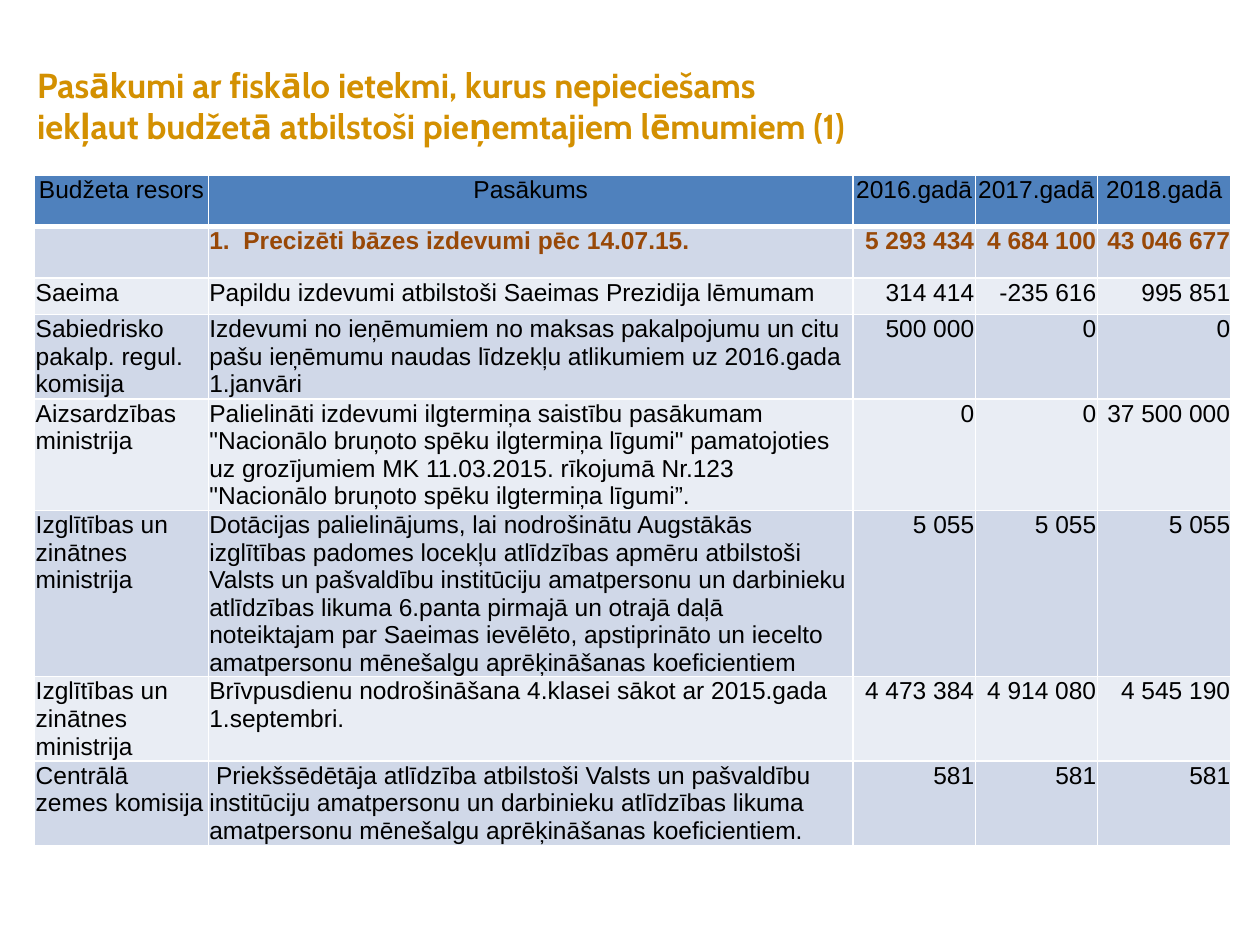
from lxml.etree import SubElement
from pptx import Presentation
from pptx.dml.color import RGBColor
from pptx.enum.text import MSO_ANCHOR, PP_ALIGN
from pptx.oxml.ns import qn
from pptx.util import Cm, Pt

TITLE = ("Pasākumi ar fiskālo ietekmi, kurus nepieciešams "
         "iekļaut budžetā atbilstoši pieņemtajiem lēmumiem (1)")
COL_WIDTHS = [3.5, 13, 2.46, 2.46, 2.7]
ROW_HEIGHTS = [1.03, 1.03, 0.74, 1.7, 2.25, 3.35, 1.7, 1.7]
ROWS = [
    ("Budžeta resors", "Pasākums", "2016.gadā", "2017.gadā", "2018.gadā"),
    ("", "1.  Precizēti bāzes izdevumi pēc 14.07.15.",
     "5 293 434", "4 684 100", "43 046 677"),
    ("Saeima", "Papildu izdevumi atbilstoši Saeimas Prezidija lēmumam",
     "314 414", "-235 616", "995 851"),
    ("Sabiedrisko pakalp. regul. komisija",
     "Izdevumi no ieņēmumiem no maksas pakalpojumu un citu pašu ieņēmumu "
     "naudas līdzekļu atlikumiem uz 2016.gada 1.janvāri",
     "500 000", "0", "0"),
    ("Aizsardzības ministrija",
     'Palielināti izdevumi ilgtermiņa saistību pasākumam "Nacionālo bruņoto '
     'spēku ilgtermiņa līgumi" pamatojoties uz grozījumiem MK 11.03.2015. '
     'rīkojumā Nr.123 "Nacionālo bruņoto spēku ilgtermiņa līgumi”.',
     "0", "0", "37 500 000"),
    ("Izglītības un zinātnes ministrija",
     "Dotācijas palielinājums, lai nodrošinātu Augstākās izglītības padomes "
     "locekļu atlīdzības apmēru atbilstoši Valsts un pašvaldību institūciju "
     "amatpersonu un darbinieku atlīdzības likuma 6.panta pirmajā un otrajā "
     "daļā noteiktajam par Saeimas ievēlēto, apstiprināto un iecelto "
     "amatpersonu mēnešalgu aprēķināšanas koeficientiem",
     "5 055", "5 055", "5 055"),
    ("Izglītības un zinātnes ministrija",
     "Brīvpusdienu nodrošināšana 4.klasei sākot ar 2015.gada 1.septembri.",
     "4 473 384", "4 914 080", "4 545 190"),
    ("Centrālā zemes komisija",
     " Priekšsēdētāja atlīdzība atbilstoši Valsts un pašvaldību institūciju "
     "amatpersonu un darbinieku atlīdzības likuma amatpersonu mēnešalgu "
     "aprēķināšanas koeficientiem.",
     "581", "581", "581"),
]
HEADER_FILL = "4F81BD"
BAND_FILLS = ["E9EDF4", "D0D8E8"]
CELL_FONT = {"name": "Arial", "size": Pt(14), "bold": False}
TITLE_FONT = {"name": "Cabin", "size": Pt(19.8), "bold": True}
CELL_MARGINS = {"margin_left": Cm(0.02), "margin_right": Cm(0.02),
                "margin_top": Cm(0.02), "margin_bottom": 0}


def rgb(color):
    return RGBColor.from_string(color)


def set_attrs(obj, values):
    for name, value in values.items():
        setattr(obj, name, value)


def add_text(tf, text, font, color, align=PP_ALIGN.LEFT):
    p = tf.paragraphs[0]
    p.alignment = align
    r = p.add_run()
    r.text = text
    set_attrs(r.font, font)
    r.font.color.rgb = rgb(color)


def add_borders(cell, top, bottom):
    """Draw white cell edges; must run before the cell gets its fill."""
    tc_pr = cell._tc.get_or_add_tcPr()
    for side, width in (("L", 1), ("R", 1), ("T", top), ("B", bottom)):
        ln = SubElement(tc_pr, qn(f"a:ln{side}"), w=str(Pt(width)))
        fill = SubElement(ln, qn("a:solidFill"))
        SubElement(fill, qn("a:srgbClr"), val="FFFFFF")


def add_title(slide, x, y, w, h):
    tf = slide.shapes.add_textbox(Cm(x), Cm(y), Cm(w), Cm(h)).text_frame
    set_attrs(tf, {"word_wrap": True, "margin_right": 0,
                   "vertical_anchor": MSO_ANCHOR.MIDDLE})
    add_text(tf, TITLE, TITLE_FONT, "D39001")


def fill_cell(cell, text, row, col):
    header, subtotal = row == 0, row == 1
    add_borders(cell, 3 if subtotal else 1, 3 if header else 1)
    cell.fill.solid()
    cell.fill.fore_color.rgb = rgb(HEADER_FILL if header else BAND_FILLS[row % 2])
    if not text:
        return
    set_attrs(cell, CELL_MARGINS)
    if header:
        align = PP_ALIGN.CENTER
    else:
        align = PP_ALIGN.RIGHT if col >= 2 else PP_ALIGN.LEFT
    add_text(cell.text_frame, text, {**CELL_FONT, "bold": subtotal},
             "984807" if subtotal else "000000", align)


def add_budget_table(slide, x, y):
    table = slide.shapes.add_table(
        len(ROWS), len(COL_WIDTHS), Cm(x), Cm(y),
        Cm(sum(COL_WIDTHS)), Cm(sum(ROW_HEIGHTS))).table
    for column, width in zip(table.columns, COL_WIDTHS):
        column.width = Cm(width)
    for i, (height, texts) in enumerate(zip(ROW_HEIGHTS, ROWS)):
        table.rows[i].height = Cm(height)
        for j, text in enumerate(texts):
            fill_cell(table.cell(i, j), text, i, j)


def main():
    prs = Presentation()
    prs.slide_width, prs.slide_height = Cm(25.4), Cm(19.05)
    slide = prs.slides.add_slide(prs.slide_layouts[6])
    add_budget_table(slide, 0.7, 3.54)
    add_title(slide, 0.5, 1.52, 16.8, 1.2)
    prs.save("out.pptx")


if __name__ == "__main__":
    main()
